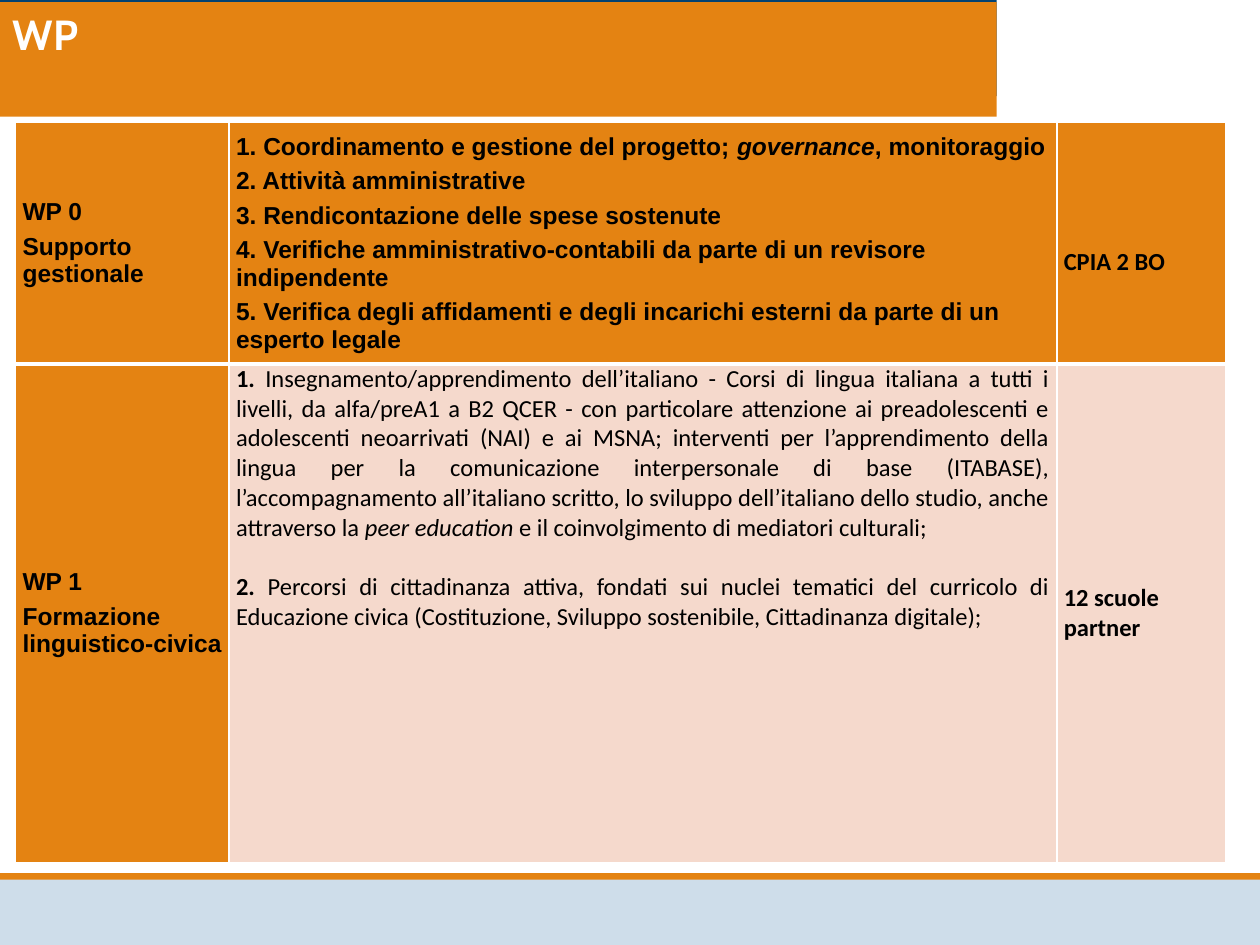
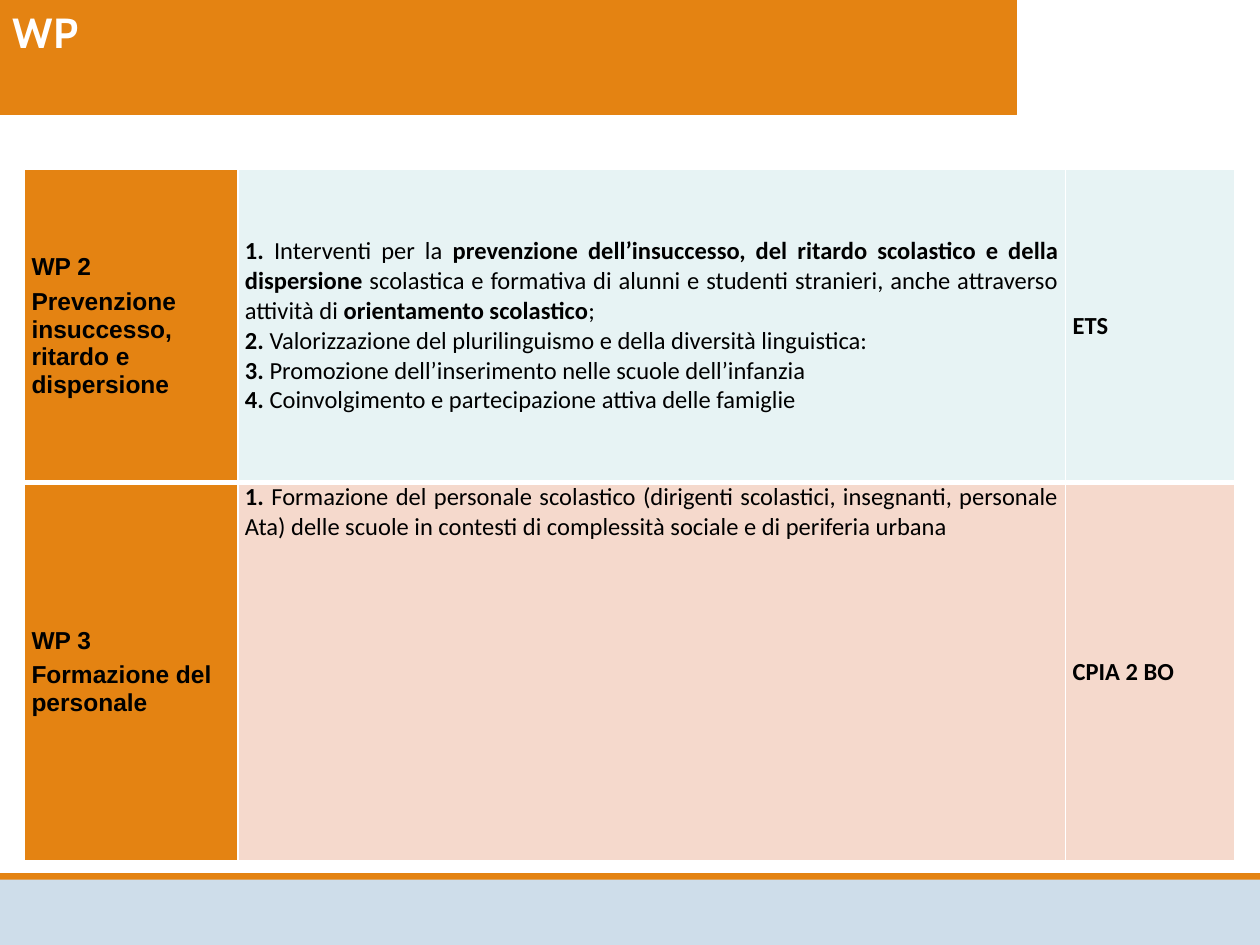
"""Build two slides that list the project's work packages, their activities and who leads them."""
from lxml import etree
from pptx import Presentation
from pptx.dml.color import RGBColor
from pptx.enum.shapes import MSO_SHAPE
from pptx.enum.text import MSO_ANCHOR, MSO_AUTO_SIZE, PP_ALIGN
from pptx.oxml.ns import qn
from pptx.util import Pt

RECTANGLE = MSO_SHAPE.RECTANGLE
TOP, MIDDLE = MSO_ANCHOR.TOP, MSO_ANCHOR.MIDDLE
LEFT, JUSTIFY = PP_ALIGN.LEFT, PP_ALIGN.JUSTIFY
FIXED_SIZE = MSO_AUTO_SIZE.NONE

ORANGE, NAVY, PALE_BLUE = "E48312", "034271", "CEDDEA"
PINK, MINT, WHITE, BLACK = "F5D9CC", "E7F3F4", "FFFFFF", "000000"
HEADING_FONT, LABEL_FONT, TEXT_FONT = "Cabin", "Arial", "Calibri"

BANDS = [
    (0, 0, 569.5, 55, NAVY),
    (0, 499, 720, 5, ORANGE),
    (0, 502.7, 720, 37.3, PALE_BLUE),
]
COLUMN_WIDTHS = [122, 473, 96.5]
SIDE_INSET = 4
EDGE, ROW_EDGE = 1, 3

SLIDES = [
    {
        "title": "WP",
        "band": (0, 1.2, 569.5, 65.5),
        "outline": None,
        "table_at": (8.9, 70),
        "packages": [
            {
                "label": ["WP 0", "Supporto gestionale"],
                "activities": [
                    [("1. Coordinamento e gestione del progetto; ", "b"),
                     ("governance", "bi"), (", monitoraggio", "b")],
                    [("2. Attività amministrative", "b")],
                    [("3. Rendicontazione delle spese sostenute", "b")],
                    [("4. Verifiche amministrativo-contabili da parte di un "
                      "revisore indipendente", "b")],
                    [("5. Verifica degli affidamenti e degli incarichi esterni "
                      "da parte di un esperto legale", "b")],
                ],
                "activity_format": {"font": LABEL_FONT, "spacing": 2},
                "leader": "CPIA 2 BO",
                "leader_drop": 21,
                "fill": ORANGE,
                "height": 138,
            },
            {
                "label": ["WP 1", "Formazione linguistico-civica"],
                "activities": [
                    [("1. ", "b"),
                     ("Insegnamento/apprendimento dell’italiano - Corsi di lingua "
                      "italiana a tutti i livelli, da alfa/preA1 a B2 QCER - con "
                      "particolare attenzione ai preadolescenti e adolescenti "
                      "neoarrivati (NAI) e ai MSNA; interventi per l’apprendimento "
                      "della lingua per la comunicazione interpersonale di base "
                      "(ITABASE), l’accompagnamento all’italiano scritto, lo sviluppo "
                      "dell’italiano dello studio, anche attraverso la ", ""),
                     ("peer education ", "i"),
                     ("e il coinvolgimento di mediatori culturali;", "")],
                    [("2. ", "b"),
                     ("Percorsi di cittadinanza attiva, fondati sui nuclei tematici "
                      "del curricolo di Educazione civica (Costituzione, Sviluppo "
                      "sostenibile, Cittadinanza digitale);", "")],
                ],
                "activity_format": {"align": JUSTIFY, "anchor": TOP, "gap": 17},
                "leader": "12 scuole partner",
                "fill": PINK,
                "height": 285,
            },
        ],
    },
    {
        "title": "WP",
        "band": (0, 0, 581, 65.5),
        "outline": ORANGE,
        "table_at": (14, 96.8),
        "packages": [
            {
                "label": ["WP 2", "Prevenzione insuccesso, ritardo e dispersione"],
                "activities": [
                    [("1. ", "b"), ("Interventi per la ", ""),
                     ("prevenzione dell’insuccesso, del ritardo scolastico e della "
                      "dispersione", "b"),
                     (" scolastica e formativa di alunni e studenti stranieri, anche "
                      "attraverso attività di ", ""),
                     ("orientamento scolastico", "b"), (";", "")],
                    [("2. ", "b"),
                     ("Valorizzazione del plurilinguismo e della diversità "
                      "linguistica:", "")],
                    [("3. ", "b"),
                     ("Promozione dell’inserimento nelle scuole dell’infanzia", "")],
                    [("4. ", "b"),
                     ("Coinvolgimento e partecipazione attiva delle famiglie", "")],
                ],
                "activity_format": {"align": JUSTIFY},
                "leader": "ETS",
                "fill": MINT,
                "height": 179,
            },
            {
                "label": ["WP 3", "Formazione del personale"],
                "activities": [
                    [("1. ", "b"),
                     ("Formazione del personale scolastico (dirigenti scolastici, "
                      "insegnanti, personale Ata) delle scuole in contesti di "
                      "complessità sociale e di periferia urbana", "")],
                ],
                "activity_format": {"align": JUSTIFY, "anchor": TOP},
                "leader": "CPIA 2 BO",
                "fill": PINK,
                "height": 216,
            },
        ],
    },
]


def color(hex_code):
    return RGBColor.from_string(hex_code)


def paint(part, hex_code):
    part.fill.solid()
    part.fill.fore_color.rgb = color(hex_code)


def add_span(para, text, style, font, size, hex_code):
    span = para.add_run()
    span.text = text
    span.font.name = font
    span.font.size = Pt(size)
    span.font.bold = "b" in style
    span.font.italic = "i" in style
    span.font.color.rgb = color(hex_code)


def add_bands(page):
    for left, top, width, height, hex_code in BANDS:
        band = page.shapes.add_shape(RECTANGLE, Pt(left), Pt(top), Pt(width), Pt(height))
        band.shadow.inherit = False
        band.line.fill.background()
        paint(band, hex_code)


def set_title(page, content):
    title = page.shapes.title
    title.left, title.top, title.width, title.height = map(Pt, content["band"])
    page.shapes._spTree.append(title._element)
    paint(title, ORANGE)
    if content["outline"]:
        title.line.color.rgb = color(content["outline"])
        title.line.width = Pt(0.75)
    frame = title.text_frame
    frame.auto_size = FIXED_SIZE
    frame.vertical_anchor = TOP
    para = frame.paragraphs[0]
    para.alignment = LEFT
    add_span(para, content["title"], "b", HEADING_FONT, 24, WHITE)


def set_borders(cell, widths):
    properties = cell._tc.get_or_add_tcPr()
    for index, (side, width) in enumerate(widths.items()):
        line = etree.Element(qn(f"a:ln{side}"), w=str(int(Pt(width))))
        solid = etree.SubElement(line, qn("a:solidFill"))
        etree.SubElement(solid, qn("a:srgbClr"), val=WHITE)
        properties.insert(index, line)


def fill_cell(cell, paragraphs, hex_code, font=TEXT_FONT, align=LEFT,
              anchor=MIDDLE, spacing=0, gap=0, drop=0):
    paint(cell, hex_code)
    cell.margin_left = cell.margin_right = Pt(SIDE_INSET)
    cell.margin_top, cell.margin_bottom = Pt(drop), Pt(0)
    cell.vertical_anchor = anchor
    frame = cell.text_frame
    for index, spans in enumerate(paragraphs):
        para = frame.add_paragraph() if index else frame.paragraphs[0]
        para.alignment = align
        para.space_before = Pt(spacing + (gap if index else 0))
        para.space_after = Pt(spacing)
        for text, style in spans:
            add_span(para, text, style, font, 14, BLACK)


def add_packages(page, content):
    packages = content["packages"]
    left, top = content["table_at"]
    height = sum(package["height"] for package in packages)
    table = page.shapes.add_table(len(packages), len(COLUMN_WIDTHS), Pt(left), Pt(top),
                                  Pt(sum(COLUMN_WIDTHS)), Pt(height)).table
    table.first_row = table.horz_banding = False
    for column, width in zip(table.columns, COLUMN_WIDTHS):
        column.width = Pt(width)
    for index, package in enumerate(packages):
        row = table.rows[index]
        row.height = Pt(package["height"])
        label, activities, leader = row.cells
        fill_cell(label, [[(text, "b")] for text in package["label"]], ORANGE,
                  font=LABEL_FONT, spacing=2)
        fill_cell(activities, package["activities"], package["fill"],
                  **package["activity_format"])
        fill_cell(leader, [[(package["leader"], "b")]], package["fill"],
                  spacing=2, drop=package.get("leader_drop", 0))
        is_last = index == len(packages) - 1
        for cell in row.cells:
            set_borders(cell, {"L": EDGE, "R": EDGE, "T": ROW_EDGE if index else EDGE,
                               "B": EDGE if is_last else ROW_EDGE})


def main():
    deck = Presentation()
    deck.slide_width, deck.slide_height = Pt(720), Pt(540)
    title_only = deck.slide_layouts[5]
    for content in SLIDES:
        page = deck.slides.add_slide(title_only)
        add_bands(page)
        set_title(page, content)
        add_packages(page, content)
    deck.save("out.pptx")


if __name__ == "__main__":
    main()
